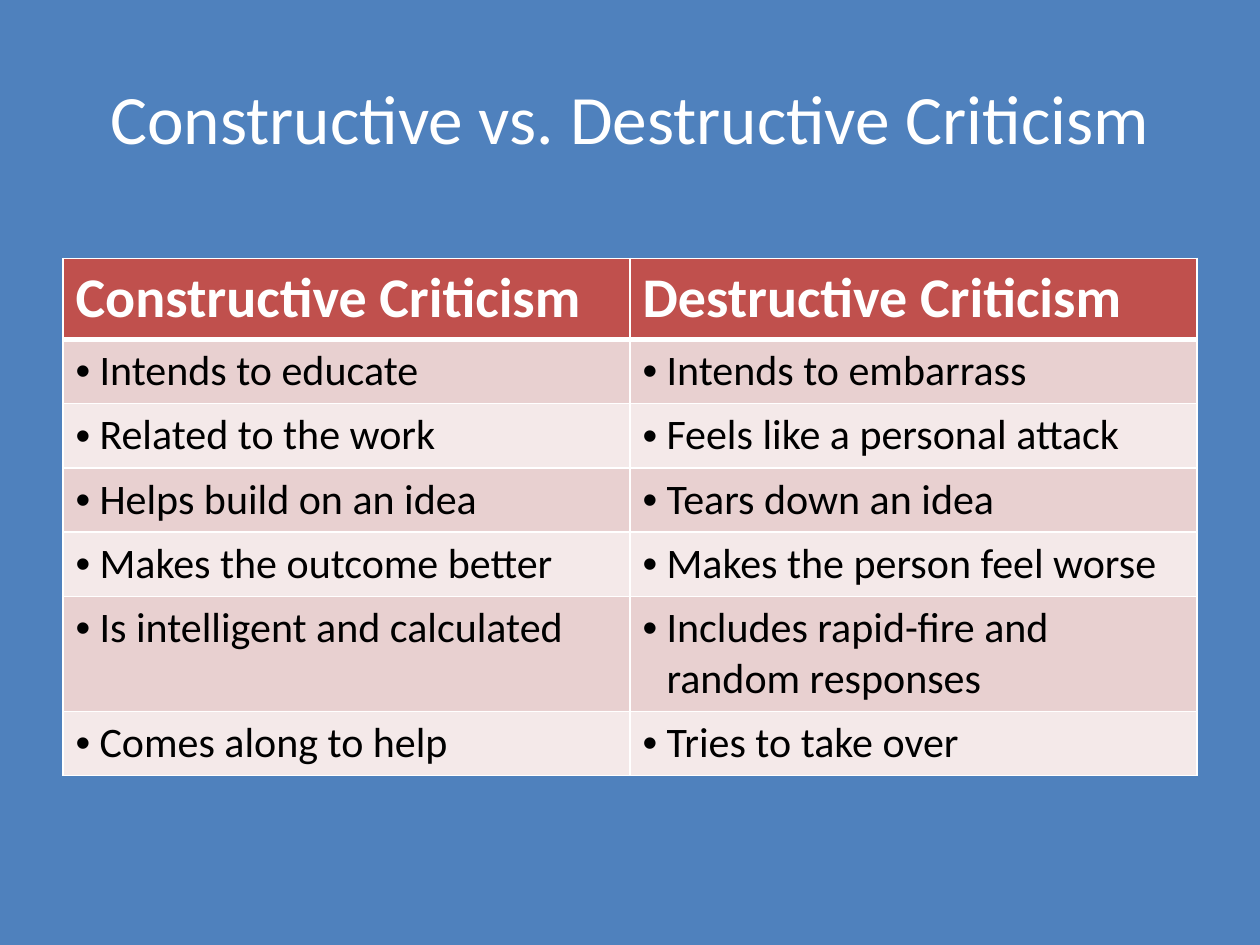
import pptx
import pptx.dml.color
import pptx.enum.text
import pptx.util
from pptx.util import Inches

FONT = "Calibri"
WHITE, BLACK, BLUE, RED = "FFFFFF", "000000", "4F81BD", "C0504D"
BANDS = ("E8D0D0", "F4E9E9")
HEADINGS = ("Constructive Criticism", "Destructive Criticism")
COMPARISONS = (
    ("Intends to educate", "Intends to embarrass"),
    ("Related to the work", "Feels like a personal attack"),
    ("Helps build on an idea", "Tears down an idea"),
    ("Makes the outcome better", "Makes the person feel worse"),
    ("Is intelligent and calculated", "Includes rapid-fire and\nrandom responses"),
    ("Comes along to help", "Tries to take over"),
)


def color(value):
    return pptx.dml.color.RGBColor.from_string(value)


def fill_solid(target, value):
    target.fill.solid()
    target.fill.fore_color.rgb = color(value)


def add_text(paragraph, text, size, value, bold=False):
    for number, line in enumerate(text.split("\n")):
        if number:
            paragraph.add_line_break()
        run = paragraph.add_run()
        run.text = line
        run.font.name = FONT
        run.font.size = pptx.util.Pt(size)
        run.font.bold = bold
        run.font.color.rgb = color(value)


def add_bullet(paragraph):
    properties = paragraph._p.get_or_add_pPr()
    properties.set("marL", str(Inches(0.19)))
    properties.set("indent", str(-Inches(0.19)))
    for tag, name, value in (("buFont", "typeface", "Arial"), ("buChar", "char", "•")):
        element = pptx.oxml.parse_xml(
            f'<a:{tag} {pptx.oxml.ns.nsdecls("a")} {name}="{value}"/>')
        properties.append(element)


def set_borders(cell, bottom, top):
    properties = cell._tc.get_or_add_tcPr()
    widths = {"lnL": 1, "lnR": 1, "lnT": top, "lnB": bottom}
    # Border lines come before the fill in the cell properties
    for position, (tag, width) in enumerate(widths.items()):
        properties.insert(position, pptx.oxml.parse_xml(
            f'<a:{tag} {pptx.oxml.ns.nsdecls("a")} w="{pptx.util.Pt(width)}">'
            f'<a:solidFill><a:srgbClr val="{WHITE}"/></a:solidFill></a:{tag}>'))


def add_title(slide, left, top, width, height):
    title = slide.shapes.title
    title.left, title.top, title.width, title.height = left, top, width, height
    frame = title.text_frame
    frame.word_wrap = True
    frame.vertical_anchor = pptx.enum.text.MSO_ANCHOR.MIDDLE
    paragraph = frame.paragraphs[0]
    paragraph.alignment = pptx.enum.text.PP_ALIGN.CENTER
    add_text(paragraph, "Constructive vs. Destructive Criticism", 39.6, WHITE)


def add_comparison(slide, left, top, width):
    rows = (HEADINGS,) + COMPARISONS
    # Row heights follow the number of text lines
    heights = [Inches(0.64)] + [
        Inches(0.91 if any("\n" in text for text in row) else 0.51)
        for row in COMPARISONS]
    table = slide.shapes.add_table(
        len(rows), len(HEADINGS), left, top, width, sum(heights)).table
    for column in table.columns:
        column.width = width // len(HEADINGS)
    for row_number, texts in enumerate(rows):
        table.rows[row_number].height = heights[row_number]
        for column_number, text in enumerate(texts):
            cell = table.cell(row_number, column_number)
            paragraph = cell.text_frame.paragraphs[0]
            if row_number == 0:
                fill_solid(cell, RED)
                add_text(paragraph, text, 32, WHITE, bold=True)
            else:
                fill_solid(cell, BANDS[(row_number - 1) % 2])
                add_bullet(paragraph)
                add_text(paragraph, text, 24, BLACK)
            set_borders(cell, bottom=3 if row_number == 0 else 1,
                        top=3 if row_number == 1 else 1)


def main():
    presentation = pptx.Presentation()
    presentation.slide_width, presentation.slide_height = Inches(10), Inches(7.5)
    # Title-only layout on a blue background
    slide = presentation.slides.add_slide(presentation.slide_layouts[5])
    fill_solid(slide.background, BLUE)
    add_title(slide, Inches(0.5), Inches(0.3), Inches(9), Inches(1.25))
    add_comparison(slide, Inches(0.5), Inches(2.05), Inches(9))
    presentation.save("out.pptx")


if __name__ == "__main__":
    main()
